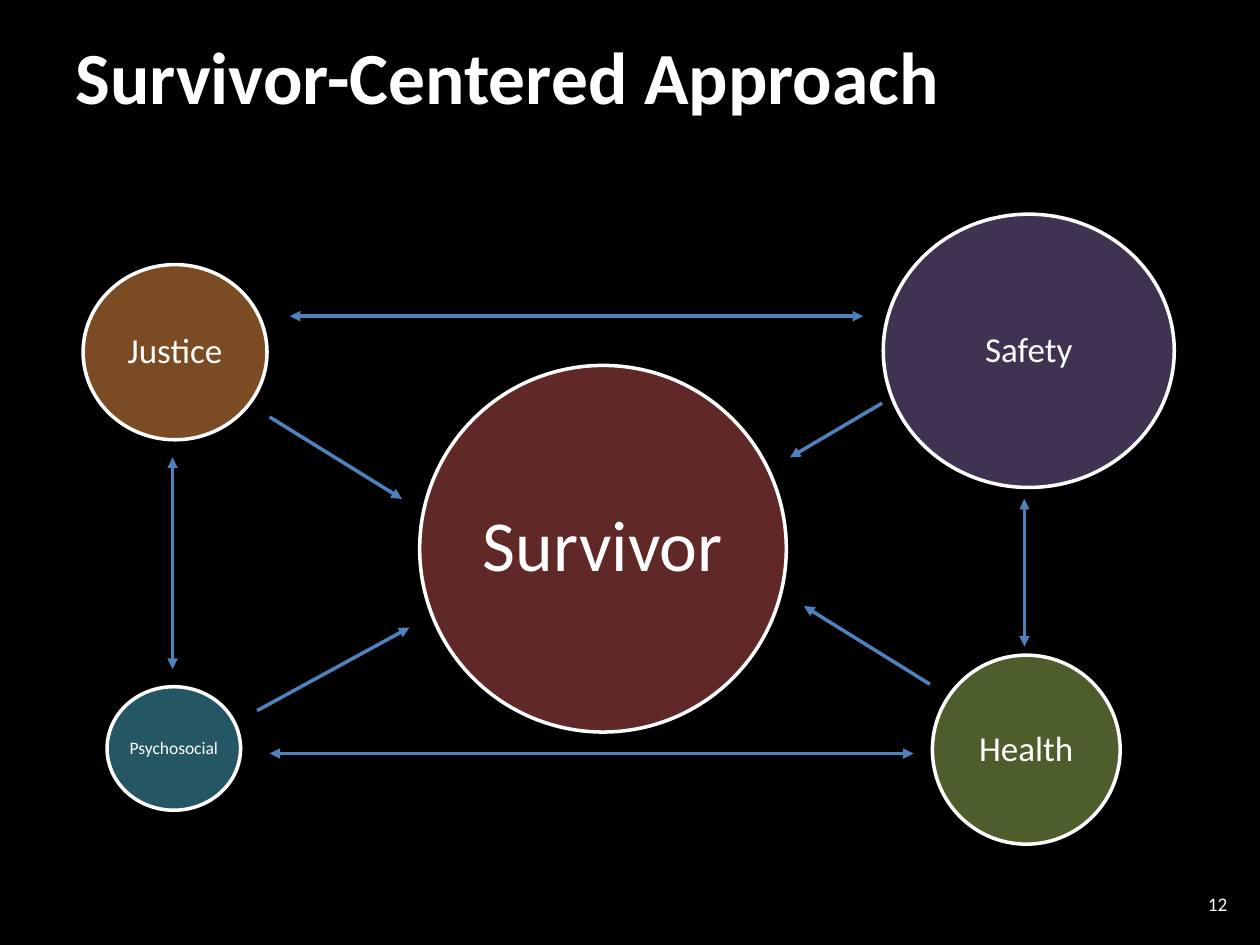
from pptx import Presentation
from pptx.dml.color import RGBColor
from pptx.enum import shapes, text
from pptx.oxml import ns
from pptx.util import Pt
from lxml import etree

BLACK = RGBColor(0x00, 0x00, 0x00)
WHITE = RGBColor(0xFF, 0xFF, 0xFF)
BLUE = RGBColor(0x4F, 0x81, 0xBD)
RED = RGBColor(0xC0, 0x50, 0x4D)
GREEN = RGBColor(0x9B, 0xBB, 0x59)
PURPLE = RGBColor(0x80, 0x64, 0xA2)
TEAL = RGBColor(0x4B, 0xAC, 0xC6)
ORANGE = RGBColor(0xF7, 0x96, 0x46)
FONT = "Calibri"

TITLE = "Survivor-Centered Approach"
PAGE_NUMBER = "12"

# label, (left, top, width, height), colour, text size
CIRCLES = [
    ("Survivor", (239.8, 208.8, 209.5, 209.5), RED, 41),
    ("Health", (532.8, 374.4, 107.3, 108), GREEN, 20),
    ("Safety", (504.7, 122.4, 166.3, 156.2), PURPLE, 20),
    ("Psychosocial", (61.2, 392.4, 76.3, 70.6), TEAL, 10),
    ("Justice", (47.5, 151.2, 105.1, 100.1), ORANGE, 20),
]
MUTUAL_LINKS = [
    (165.6, 180.7, 493.2, 180.7),
    (154.1, 430.6, 522, 430.6),
    (98.6, 261.4, 98.6, 382.3),
    (585.4, 285.1, 585.4, 369.4),
]
LINKS_TO_SURVIVOR = [
    (154.1, 238.3, 229.7, 285.1),
    (504, 230.4, 451.4, 261.4),
    (146.9, 406.1, 234, 358.6),
    (531.4, 391, 459.4, 346.3),
]


def write(frame, words, size, align, bold=False):
    frame.vertical_anchor = text.MSO_ANCHOR.MIDDLE
    paragraph = frame.paragraphs[0]
    paragraph.text = words
    paragraph.alignment = align
    paragraph.font.name = FONT
    paragraph.font.size = Pt(size)
    paragraph.font.bold = bold
    paragraph.font.color.rgb = WHITE
    return paragraph


def add_label(slide, box, words, size, align, bold=False):
    label = slide.shapes.add_textbox(*map(Pt, box))
    label.text_frame.word_wrap = True
    write(label.text_frame, words, size, align, bold)


def add_circle(slide, words, box, colour, size):
    circle = slide.shapes.add_shape(shapes.MSO_SHAPE.OVAL, *map(Pt, box))
    circle.shadow.inherit = False
    circle.fill.solid()
    circle.fill.fore_color.rgb = colour
    tint = circle.fill._xPr.find(".//" + ns.qn("a:srgbClr"))
    etree.SubElement(tint, ns.qn("a:alpha"), val="50000")
    circle.line.color.rgb = WHITE
    circle.line.width = Pt(2)
    frame = circle.text_frame
    frame.word_wrap = False
    frame.margin_left = frame.margin_right = Pt(1)
    frame.margin_top = frame.margin_bottom = Pt(1)
    write(frame, words, size, text.PP_ALIGN.CENTER).line_spacing = 0.9


def add_arrow(slide, ends, mutual):
    arrow = slide.shapes.add_connector(shapes.MSO_CONNECTOR.STRAIGHT, *map(Pt, ends))
    arrow.line.color.rgb = BLUE
    arrow.line.width = Pt(2)
    line = arrow.line._get_or_add_ln()
    for tag in ("a:headEnd", "a:tailEnd") if mutual else ("a:tailEnd",):
        etree.SubElement(line, ns.qn(tag), type="triangle")
    etree.SubElement(arrow._element.spPr, ns.qn("a:effectLst"))


def main():
    deck = Presentation()
    deck.slide_width, deck.slide_height = Pt(720), Pt(540)
    slide = deck.slides.add_slide(deck.slide_layouts[6])
    slide.background.fill.solid()
    slide.background.fill.fore_color.rgb = BLACK

    add_label(slide, (614.9, 506.2, 93.6, 20.9), PAGE_NUMBER, 11, text.PP_ALIGN.RIGHT)
    add_label(slide, (36, 0, 648, 86.4), TITLE, 42, text.PP_ALIGN.LEFT, bold=True)
    for circle in CIRCLES:
        add_circle(slide, *circle)
    for ends in MUTUAL_LINKS:
        add_arrow(slide, ends, mutual=True)
    for ends in LINKS_TO_SURVIVOR:
        add_arrow(slide, ends, mutual=False)
    deck.save("out.pptx")


if __name__ == "__main__":
    main()
